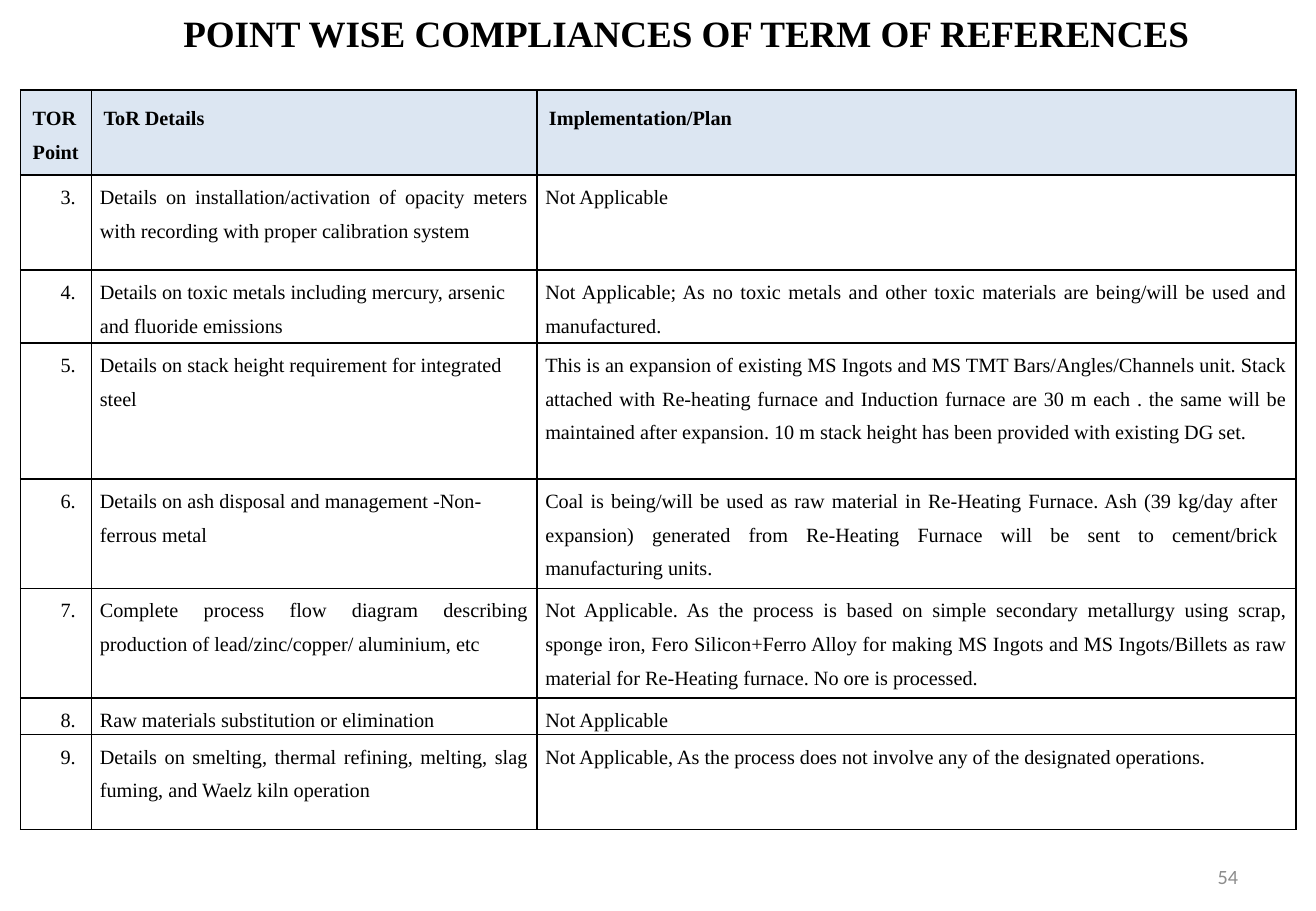
from lxml import etree
from pptx import Presentation
from pptx.dml.color import RGBColor
from pptx.enum.text import MSO_ANCHOR, PP_ALIGN
from pptx.oxml.ns import qn
from pptx.util import Pt

LEFT, CENTER, RIGHT, JUSTIFY = (
    PP_ALIGN.LEFT, PP_ALIGN.CENTER, PP_ALIGN.RIGHT, PP_ALIGN.JUSTIFY)
MIDDLE, TOP = MSO_ANCHOR.MIDDLE, MSO_ANCHOR.TOP
BLACK = RGBColor(0x00, 0x00, 0x00)
GRAY = RGBColor(0x8C, 0x8C, 0x8C)
HEADER_BLUE = RGBColor(0xDC, 0xE6, 0xF2)

COL_WIDTHS = (42, 264, 450)
ROW_HEIGHTS = (50.4, 56.3, 43.3, 80.6, 64.6, 64.6, 21.9, 56.3)
HEADERS = ("TOR Point", "ToR Details", "Implementation/Plan")
FIRST_POINT = 3
NUMBER_INDENT = 18.75

# Each row: details, its alignment and space after; plan, its alignment and space after
ROWS = (
    ("Details on installation/activation of opacity meters with recording with "
     "proper calibration system", JUSTIFY, 6,
     "Not Applicable", LEFT, 6),
    ("Details on toxic metals including mercury, arsenic and fluoride emissions", LEFT, 10,
     "Not Applicable; As no toxic metals and other toxic materials are being/will "
     "be used and manufactured.", JUSTIFY, 6),
    ("Details on stack height requirement for integrated steel", LEFT, 0,
     "This is an expansion of existing MS Ingots and MS TMT Bars/Angles/Channels "
     "unit. Stack attached with Re-heating furnace and Induction furnace are 30 m "
     "each . the same will be maintained after expansion. 10 m stack height has "
     "been provided with existing DG set.", JUSTIFY, 10),
    ("Details on ash disposal and management -Non-ferrous metal", LEFT, 10,
     "Coal is being/will be used as raw material in Re-Heating Furnace. Ash "
     "(39 kg/day after expansion) generated from Re-Heating Furnace will be sent "
     "to cement/brick manufacturing units.", JUSTIFY, 6),
    ("Complete process flow diagram describing production of lead/zinc/copper/ "
     "aluminium, etc", JUSTIFY, 6,
     "Not Applicable. As the process is based on simple secondary metallurgy using "
     "scrap, sponge iron, Fero Silicon+Ferro Alloy for making MS Ingots and MS "
     "Ingots/Billets as raw material for Re-Heating furnace. No ore is processed.",
     JUSTIFY, 6),
    ("Raw materials substitution or elimination", LEFT, 6,
     "Not Applicable", LEFT, 6),
    ("Details on smelting, thermal refining, melting, slag fuming, and Waelz kiln "
     "operation", JUSTIFY, 6,
     "Not Applicable, As the process does not involve any of the designated "
     "operations.", JUSTIFY, 6),
)
ASH_POINT = 6  # its plan text has a wider right margin


def write(tf, text, size=12, font="Times New Roman", color=BLACK, bold=False,
          align=LEFT, spacing=1.0, after=0, indent=0):
    p = tf.paragraphs[0]
    p.alignment, p.line_spacing, p.space_after = align, spacing, Pt(after)
    p.space_before = Pt(0)
    if indent:
        p._p.get_or_add_pPr().set("marL", str(Pt(indent)))
    r = p.add_run()
    r.text = text
    r.font.size, r.font.name, r.font.bold = Pt(size), font, bold
    r.font.color.rgb = color


class SlideBuilder:
    def __init__(self, prs):
        self.slide = prs.slides.add_slide(prs.slide_layouts[5])
        self.border_color, self.border_width = BLACK, 1

    def title(self, text, x, y, w, h):
        sp = self.slide.shapes.title
        sp.left, sp.top, sp.width, sp.height = Pt(x), Pt(y), Pt(w), Pt(h)
        sp.text_frame.vertical_anchor = MIDDLE
        sp.text_frame.word_wrap = True
        write(sp.text_frame, text, size=22, bold=True, align=CENTER)

    def text(self, text, x, y, w, h, **style):
        tf = self.slide.shapes.add_textbox(Pt(x), Pt(y), Pt(w), Pt(h)).text_frame
        tf.word_wrap = True
        tf.vertical_anchor = MIDDLE
        write(tf, text, **style)

    def table(self, x, y, widths, heights):
        table = self.slide.shapes.add_table(
            len(heights), len(widths), Pt(x), Pt(y),
            Pt(sum(widths)), Pt(sum(heights))).table
        table.horz_banding = False
        for col, width in zip(table.columns, widths):
            col.width = Pt(width)
        for row, height in zip(table.rows, heights):
            row.height = Pt(height)
        return table

    def cell(self, cell, text, fill=None, margins=None, **style):
        if margins:
            cell.margin_left, cell.margin_right = Pt(margins[0]), Pt(margins[1])
            cell.margin_top = cell.margin_bottom = Pt(0)
        cell.vertical_anchor = TOP
        self.borders(cell)
        if fill:
            cell.fill.solid()
            cell.fill.fore_color.rgb = fill
        else:
            cell.fill.background()
        write(cell.text_frame, text, spacing=1.5, **style)

    def borders(self, cell):
        tcPr = cell._tc.get_or_add_tcPr()
        for side in ("a:lnL", "a:lnR", "a:lnT", "a:lnB"):
            ln = etree.SubElement(tcPr, qn(side), w=str(Pt(self.border_width)))
            solid = etree.SubElement(ln, qn("a:solidFill"))
            etree.SubElement(solid, qn("a:srgbClr"), val=str(self.border_color))


def main():
    prs = Presentation()
    prs.slide_width, prs.slide_height = Pt(780), Pt(540)
    s = SlideBuilder(prs)

    # Title and page number
    s.title("POINT WISE COMPLIANCES OF TERM OF REFERENCES", 39.6, 2.2, 734.4, 34)
    s.text("54", 558.7, 505.4, 182.2, 28.8, font="Calibri", color=GRAY, align=RIGHT)

    # Table header
    table = s.table(12.2, 53.4, COL_WIDTHS, ROW_HEIGHTS)
    for col, header in enumerate(HEADERS):
        s.cell(table.cell(0, col), header, fill=HEADER_BLUE, bold=True)

    # Table body
    margins = (5.04, 5.04)
    for i, row in enumerate(ROWS, 1):
        details, d_align, d_after, plan, p_align, p_after = row
        point = FIRST_POINT + i - 1
        plan_margins = (5.04, 10.08) if point == ASH_POINT else margins
        s.cell(table.cell(i, 0), f"{point}.", margins=margins, after=6,
               indent=NUMBER_INDENT)
        s.cell(table.cell(i, 1), details, margins=margins, align=d_align, after=d_after)
        s.cell(table.cell(i, 2), plan, margins=plan_margins, align=p_align, after=p_after)

    prs.save("out.pptx")


if __name__ == "__main__":
    main()
